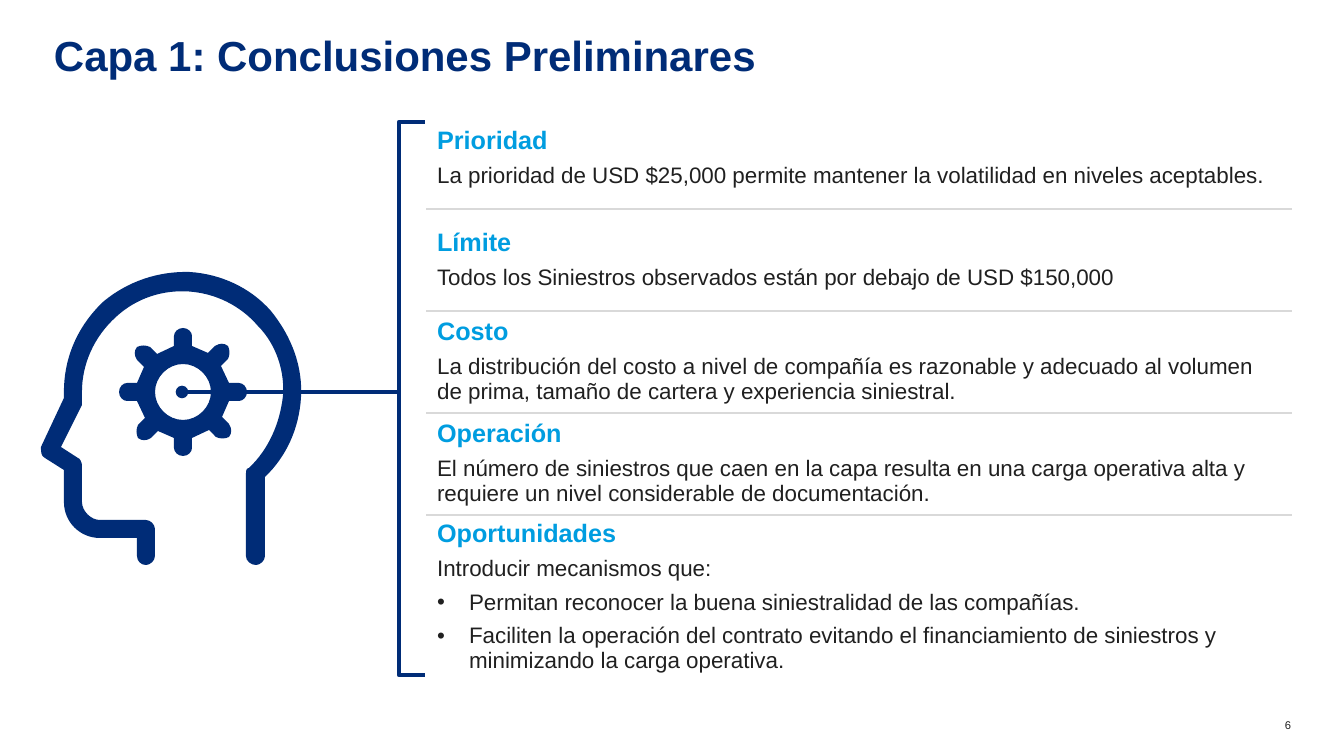
from lxml import etree
from pptx import Presentation
from pptx.dml.color import RGBColor
from pptx.enum.shapes import MSO_CONNECTOR
from pptx.enum.text import MSO_ANCHOR, PP_ALIGN
from pptx.oxml.ns import qn
from pptx.util import Emu, Pt

STRAIGHT = MSO_CONNECTOR.STRAIGHT
MIDDLE = MSO_ANCHOR.MIDDLE
RIGHT = PP_ALIGN.RIGHT
EMU_PER_PX = 914400 / 100.8

THEME = {
    "font": "Arial",
    "navy": RGBColor(0x00, 0x2C, 0x77),
    "rule": "D9D9D9",
    "line_width": Pt(3),
    "rule_width": Pt(1.5),
    "title": {"size": Pt(30), "bold": True, "color": RGBColor(0x00, 0x2C, 0x77)},
    "heading": {"size": Pt(18), "bold": True, "color": RGBColor(0x00, 0x9D, 0xE0)},
    "body": {"size": Pt(16), "bold": False, "color": RGBColor(0x20, 0x20, 0x20)},
    "page": {"size": Pt(8), "bold": False, "color": RGBColor(0x20, 0x20, 0x20)},
}

# Heading, text, bullets
CONCLUSIONS = [
    ("Prioridad", "La prioridad de USD $25,000 permite mantener la volatilidad en niveles aceptables.", []),
    ("Límite", "Todos los Siniestros observados están por debajo de USD $150,000", []),
    ("Costo", "La distribución del costo a nivel de compañía es razonable y adecuado al volumen "
     "de prima, tamaño de cartera y experiencia siniestral.", []),
    ("Operación", "El número de siniestros que caen en la capa resulta en una carga operativa alta y "
     "requiere un nivel considerable de documentación.", []),
    ("Oportunidades", "Introducir mecanismos que:", [
        "Permitan reconocer la buena siniestralidad de las compañías.",
        "Faciliten la operación del contrato evitando el financiamiento de siniestros y "
        "minimizando la carga operativa."]),
]

# Two numbers are a corner, six are a Bézier curve
BRACKET = [(425, 122), (399, 122), (399, 675), (425, 675)]
HEAD = [
    (271, 311), (250, 287, 220, 274, 190, 272), (159, 271, 128, 281, 103, 302),
    (78, 326, 64, 357, 64, 392), (64, 398), (41, 447), (41, 452, 41, 456, 45, 458),
    (64, 470), (64, 502), (64, 522, 80, 538, 100, 538), (137, 538), (137, 556),
    (137, 561, 141, 565, 146, 565), (150, 565, 155, 561, 155, 556), (155, 529),
    (155, 524, 150, 520, 146, 520), (100, 520), (91, 520, 82, 511, 82, 502),
    (82, 465), (82, 463, 80, 458, 78, 458), (61, 447), (82, 405),
    (82, 403, 82, 403, 82, 401), (82, 392), (82, 364, 94, 337, 116, 317),
    (157, 279, 222, 284, 258, 326), (276, 344, 285, 371, 283, 396),
    (280, 423, 269, 449, 249, 468), (246, 468, 246, 472, 246, 474), (246, 556),
    (246, 561, 251, 565, 256, 565), (260, 565, 265, 561, 265, 556), (265, 477),
    (287, 456, 299, 428, 301, 398), (303, 367, 292, 337, 271, 311),
]
GEAR_CENTER = (183, 392)
# A quarter of the rim: one upright tooth and one diagonal tooth
RIM_QUARTER = [
    (46, -9), (56, -9), (60, -9, 64, -5, 64, 0), (64, 5, 60, 9, 56, 9), (46, 9),
    (39, 25), (46, 32), (49, 37, 49, 41, 46, 45), (42, 47, 37, 47, 33, 45), (26, 38),
]
HOLE_QUARTER = [(28, 0, 28, 15, 15, 28, 0, 28)[2:]]
HOLE_START = (28, 0)


def px(length):
    return Emu(round(length * EMU_PER_PX))


def pairs(part):
    return list(zip(part[::2], part[1::2]))


def repeat_quarter(quarter):
    """Turn a quarter outline about the gear centre into a whole one."""
    outline = []
    for cosine, sine in ((1, 0), (0, 1), (-1, 0), (0, -1)):
        for part in quarter:
            turned = []
            for x, y in pairs(part):
                turned += [GEAR_CENTER[0] + x * cosine - y * sine,
                           GEAR_CENTER[1] + x * sine + y * cosine]
            outline.append(tuple(turned))
    return outline


def gear_contours():
    hole_start = tuple(c + offset for c, offset in zip(GEAR_CENTER, HOLE_START))
    return [repeat_quarter(RIM_QUARTER), [hole_start] + repeat_quarter(HOLE_QUARTER)]


def bend(shape, parts):
    """Replace the straight segments of curved parts by Bézier segments."""
    segments = list(shape.element.iter(qn("a:lnTo")))
    for segment, part in zip(segments, parts):
        if len(part) == 2:
            continue
        curve = etree.Element(qn("a:cubicBezTo"))
        for x, y in pairs(part):
            etree.SubElement(curve, qn("a:pt"),
                             x=str(px(x) - shape.left), y=str(px(y) - shape.top))
        segment.getparent().replace(segment, curve)


def add_outline(slide, contours, closed=True):
    """Add a filled shape, or a stroked one when the contours are open."""
    corners = [[tuple(map(px, part[-2:])) for part in contour] for contour in contours]
    builder = slide.shapes.build_freeform(*corners[0][0])
    for index, contour in enumerate(corners):
        if index:
            builder.move_to(*contour[0])
        builder.add_line_segments(contour[1:], close=closed)
    shape = builder.convert_to_shape()
    bend(shape, [part for contour in contours for part in contour[1:]])
    shape.shadow.inherit = False
    if closed:
        shape.fill.solid()
        shape.fill.fore_color.rgb = THEME["navy"]
        shape.line.fill.background()
    else:
        shape.fill.background()
        shape.line.color.rgb = THEME["navy"]
        shape.line.width = THEME["line_width"]


def add_pointer(slide, start, end):
    """Add a line with a round dot at its start."""
    pointer = slide.shapes.add_connector(STRAIGHT, *map(px, start + end))
    pointer.line.color.rgb = THEME["navy"]
    pointer.line.width = THEME["line_width"]
    properties = pointer.element.spPr
    etree.SubElement(properties.find(qn("a:ln")), qn("a:headEnd"), type="oval")
    etree.SubElement(properties, qn("a:effectLst"))


def write(paragraph, text, style):
    paragraph.text = text
    font = paragraph.runs[0].font
    font.name = THEME["font"]
    for name, value in THEME[style].items():
        if name == "color":
            font.color.rgb = value
        else:
            setattr(font, name, value)


def add_text(slide, box, text, style, **paragraph_format):
    frame = slide.shapes.add_textbox(*map(px, box)).text_frame
    frame.word_wrap = True
    for side in ("left", "top", "right", "bottom"):
        setattr(frame, f"margin_{side}", 0)
    paragraph = frame.paragraphs[0]
    for name, value in paragraph_format.items():
        setattr(paragraph, name, value)
    write(paragraph, text, style)


def add_bullet(paragraph):
    properties = paragraph._p.get_or_add_pPr()
    properties.set("marL", str(px(32)))
    properties.set("indent", str(-px(32)))
    etree.SubElement(properties, qn("a:buFont"), typeface=THEME["font"])
    etree.SubElement(properties, qn("a:buChar"), char="•")


def add_border(cell, side):
    line = etree.Element(qn(f"a:{side}"), w=str(THEME["rule_width"]), cap="flat")
    fill = etree.SubElement(line, qn("a:solidFill"))
    etree.SubElement(fill, qn("a:srgbClr"), val=THEME["rule"])
    cell._tc.get_or_add_tcPr().insert(0, line)


def fill_cell(cell, heading, text, bullets):
    cell.fill.background()
    cell.vertical_anchor = MIDDLE
    cell.margin_top, cell.margin_bottom = 0, px(2)
    lines = [(heading, "heading"), (text, "body")] + [(bullet, "body") for bullet in bullets]
    for index, (content, style) in enumerate(lines):
        paragraph = cell.text_frame.add_paragraph() if index else cell.text_frame.paragraphs[0]
        paragraph.space_after = Pt(6)
        if index > 1:
            add_bullet(paragraph)
        write(paragraph, content, style)


def add_conclusions(slide, left, top, width, row_height):
    count = len(CONCLUSIONS)
    table = slide.shapes.add_table(
        count, 1, px(left), px(top), px(width), px(row_height * count)).table
    table.first_row = table.horz_banding = False
    for index, conclusion in enumerate(CONCLUSIONS):
        cell = table.cell(index, 0)
        fill_cell(cell, *conclusion)
        if index < count - 1:
            add_border(cell, "lnB")
        if index:
            add_border(cell, "lnT")


def main():
    presentation = Presentation()
    presentation.slide_width, presentation.slide_height = px(1344), px(756)
    slide = presentation.slides.add_slide(presentation.slide_layouts[6])
    add_text(slide, (54, 39, 1237, 54), "Capa 1: Conclusiones Preliminares", "title",
             line_spacing=0.8)
    add_text(slide, (1260, 718, 31, 13), "6", "page", alignment=RIGHT)
    add_pointer(slide, (182, 392), (397, 392))
    add_outline(slide, [BRACKET], closed=False)
    add_conclusions(slide, 427, 107, 864, 102)
    add_outline(slide, [HEAD])
    add_outline(slide, gear_contours())
    presentation.save("out.pptx")


if __name__ == "__main__":
    main()
